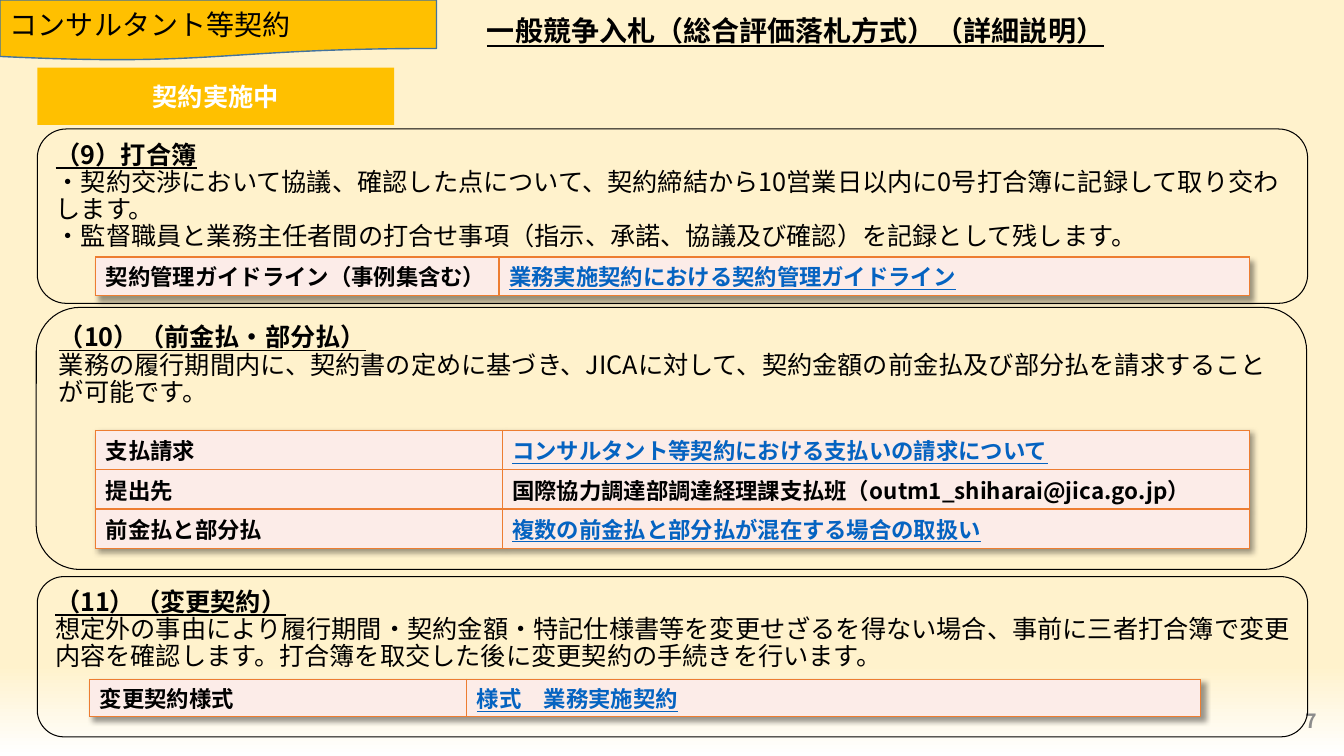
from lxml import etree
from pptx import Presentation
from pptx.dml.color import RGBColor
from pptx.enum.shapes import MSO_SHAPE as Shape
from pptx.enum.text import MSO_ANCHOR as Anchor, MSO_AUTO_SIZE as AutoSize, PP_ALIGN as Align
from pptx.oxml import parse_xml
from pptx.oxml.ns import nsdecls, qn
from pptx.util import Inches, Pt

FONT = "Noto Sans CJK JP"
BLACK, WHITE, GREY = "000000", "FFFFFF", "8C8C8C"
AMBER, CREAM, PINK = "FFC000", "FFF2CC", "FCECE8"
ORANGE, BLUE, LINK = "ED7D31", "43739E", "0563C1"


def rgb(color):
    return RGBColor.from_string(color)


class SlideBuilder:
    def __init__(self, presentation):
        self.slide = presentation.slides.add_slide(presentation.slide_layouts[5])

    def background(self, top, bottom, start):
        fill = self.slide.background.fill
        fill.gradient()
        fill.gradient_angle = 270
        for stop, color, position in zip(fill.gradient_stops, (top, bottom), (start, 1)):
            stop.color.rgb = rgb(color)
            stop.position = position

    def set_text(self, paragraph, text, size, color=BLACK, bold=False, underline=False,
                 align=Align.LEFT):
        paragraph.text = text
        paragraph.alignment = align
        font = paragraph.font
        font.name, font.size, font.bold, font.underline = FONT, Pt(size), bold, underline
        font.color.rgb = rgb(color)
        properties = paragraph._p.get_or_add_pPr().get_or_add_defRPr()
        etree.SubElement(properties, qn("a:ea"), typeface=FONT)

    def place(self, shape, box):
        shape.left, shape.top, shape.width, shape.height = map(Inches, box)
        frame = shape.text_frame
        frame.word_wrap = True
        frame.auto_size = AutoSize.NONE
        frame.vertical_anchor = Anchor.MIDDLE
        return frame.paragraphs[0]

    def title(self, box, text):
        paragraph = self.place(self.slide.shapes.title, box)
        self.set_text(paragraph, text, 20, bold=True, underline=True)

    def text(self, box, text, size, **style):
        shape = self.slide.shapes.add_textbox(*map(Inches, box))
        self.set_text(self.place(shape, box), text, size, **style)

    def shape(self, kind, box, fill=None, line=None, line_width=1):
        shape = self.slide.shapes.add_shape(kind, *map(Inches, box))
        shape.shadow.inherit = False
        if fill:
            shape.fill.solid()
            shape.fill.fore_color.rgb = rgb(fill)
        else:
            shape.fill.background()
        if line:
            shape.line.color.rgb = rgb(line)
            shape.line.width = Pt(line_width)
        else:
            shape.line.fill.background()
        return shape

    def label(self, kind, box, text, size, line=None, **style):
        shape = self.shape(kind, box, AMBER, line)
        self.set_text(self.place(shape, box), text, size, **style)

    def panel(self, box, heading, *body):
        """Draw a rounded outline with an underlined heading and body paragraphs."""
        shape = self.shape(Shape.ROUNDED_RECTANGLE, box, line=BLACK, line_width=0.75)
        paragraph = self.place(shape, box)
        frame = shape.text_frame
        frame.vertical_anchor = Anchor.TOP
        self.set_text(paragraph, heading, 18, bold=True, underline=True)
        for text in body:
            self.set_text(frame.add_paragraph(), text, 18)
        for paragraph in frame.paragraphs:
            paragraph.line_spacing = 0.9

    def table(self, left, top, column_widths, row_height, rows):
        """Draw a two-column table; each row is (label, value, whether value is a link)."""
        frame = self.slide.shapes.add_table(
            len(rows), 2, Inches(left), Inches(top),
            Inches(sum(column_widths)), Inches(row_height * len(rows)))
        table = frame.table
        table.first_row = table.horz_banding = False
        table._tbl.tblPr.insert(0, parse_xml(
            f'<a:effectLst {nsdecls("a")}><a:outerShdw blurRad="50800" dist="38100" '
            'dir="2700000"><a:srgbClr val="000000"><a:alpha val="40000"/></a:srgbClr>'
            '</a:outerShdw></a:effectLst>'))
        for column, width in zip(table.columns, column_widths):
            column.width = Inches(width)
        for row, (label, value, is_link) in zip(table.rows, rows):
            row.height = Inches(row_height)
            self.cell(row.cells[0], label)
            self.cell(row.cells[1], value, is_link)

    def cell(self, cell, text, is_link=False):
        cell.vertical_anchor = Anchor.MIDDLE
        cell.margin_top = cell.margin_bottom = Inches(0.02)
        cell.fill.solid()
        cell.fill.fore_color.rgb = rgb(PINK)
        for index, side in enumerate("LRTB"):
            cell._tc.get_or_add_tcPr().insert(index, parse_xml(
                f'<a:ln{side} {nsdecls("a")} w="12700"><a:solidFill>'
                f'<a:srgbClr val="{ORANGE}"/></a:solidFill></a:ln{side}>'))
        self.set_text(cell.text_frame.paragraphs[0], text, 16, LINK if is_link else BLACK,
                      bold=True, underline=is_link)


def main():
    presentation = Presentation()
    presentation.slide_width, presentation.slide_height = Inches(13.33), Inches(7.5)
    builder = SlideBuilder(presentation)
    builder.background(CREAM, WHITE, 0.88)
    builder.title((4.73, 0, 6.62, 0.61), "一般競争入札（総合評価落札方式）（詳細説明）")
    builder.text((10.16, 6.95, 3, 0.4), "7", 14, color=GREY, bold=True, align=Align.RIGHT)
    builder.label(Shape.FLOWCHART_DOCUMENT, (0, 0, 4.33, 0.6), "コンサルタント等契約", 20, BLUE)
    builder.label(Shape.RECTANGLE, (0.37, 0.67, 3.54, 0.57), "契約実施中", 18,
                  color=WHITE, bold=True, align=Align.CENTER)

    builder.panel(
        (0.37, 1.28, 12.6, 1.73), "（9）打合簿",
        "・契約交渉において協議、確認した点について、契約締結から10営業日以内に0号打合簿に記録して取り交わします。",
        "・監督職員と業務主任者間の打合せ事項（指示、承諾、協議及び確認）を記録として残します。")
    builder.table(0.95, 2.55, (4, 7.44), 0.38, [
        ("契約管理ガイドライン（事例集含む）", "業務実施契約における契約管理ガイドライン", True)])

    builder.panel(
        (0.36, 3.05, 12.6, 2.6), "（10）（前金払・部分払）",
        "業務の履行期間内に、契約書の定めに基づき、JICAに対して、契約金額の前金払及び部分払を請求することが可能です。")
    builder.table(0.95, 4.27, (4.03, 7.41), 0.39, [
        ("支払請求", "コンサルタント等契約における支払いの請求について", True),
        ("提出先", "国際協力調達部調達経理課支払班（outm1_shiharai@jica.go.jp）", False),
        ("前金払と部分払", "複数の前金払と部分払が混在する場合の取扱い", True)])

    builder.panel(
        (0.37, 5.72, 12.6, 1.59), "（11）（変更契約）",
        "想定外の事由により履行期間・契約金額・特記仕様書等を変更せざるを得ない場合、事前に三者打合簿で変更内容を確認します。"
        "打合簿を取交した後に変更契約の手続きを行います。")
    builder.table(0.89, 6.74, (3.74, 7.28), 0.37, [
        ("変更契約様式", "様式　業務実施契約", True)])

    presentation.save("out.pptx")


if __name__ == "__main__":
    main()
